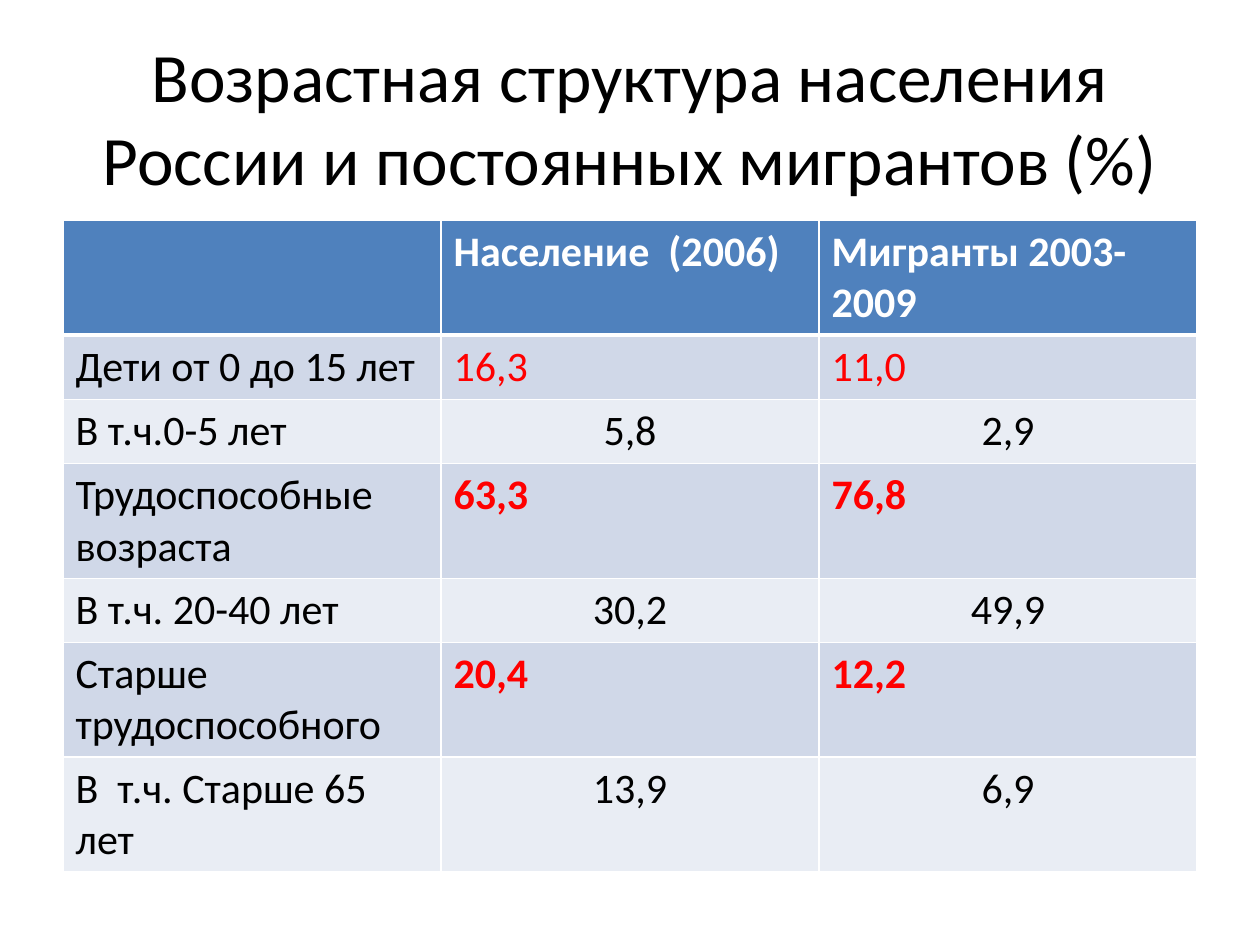
from lxml.etree import SubElement
from pptx import Presentation
from pptx.dml.color import RGBColor as RGB
from pptx.enum.text import MSO_ANCHOR as Anchor, PP_ALIGN as Align
from pptx.oxml.ns import qn
from pptx.util import Inches, Pt

FONT = "Calibri"
COLORS = {
    "text": "000000",
    "accent": "FF0000",
    "white": "FFFFFF",
    "header": "4F81BD",
    "group": "D0D8E8",
    "detail": "E9EDF4",
}
HEADERS = ["", "Население  (2006)", "Мигранты 2003-2009"]
AGES = [
    ("Дети от 0 до 15 лет", "16,3", "11,0"),
    ("В т.ч.0-5 лет", "5,8", "2,9"),
    ("Трудоспособные возраста", "63,3", "76,8"),
    ("В т.ч. 20-40 лет", "30,2", "49,9"),
    ("Старше трудоспособного", "20,4", "12,2"),
    ("В  т.ч. Старше 65 лет", "13,9", "6,9"),
]
ONE_LINE, TWO_LINES = 0.51, 0.91
ROW_HEIGHTS = [TWO_LINES, ONE_LINE, ONE_LINE, TWO_LINES, ONE_LINE, TWO_LINES, TWO_LINES]


def write(frame, text, size, color, bold=False, align=Align.LEFT):
    paragraph = frame.paragraphs[0]
    paragraph.alignment = align
    run = paragraph.add_run()
    run.text = text
    run.font.name = FONT
    run.font.size = Pt(size)
    run.font.bold = bold
    run.font.color.rgb = RGB.from_string(COLORS[color])


def add_title(slide, text):
    title = slide.shapes.add_textbox(Inches(0.5), Inches(0.3), Inches(9), Inches(1.25))
    title.text_frame.word_wrap = True
    title.text_frame.vertical_anchor = Anchor.MIDDLE
    write(title.text_frame, text, 39.6, "text", align=Align.CENTER)


def set_borders(cell, top, bottom):
    properties = cell._tc.get_or_add_tcPr()
    widths = {"a:lnL": 1, "a:lnR": 1, "a:lnT": top, "a:lnB": bottom}
    for position, (side, width) in enumerate(widths.items()):
        line = SubElement(properties, qn(side), w=str(Pt(width)))
        fill = SubElement(line, qn("a:solidFill"))
        SubElement(fill, qn("a:srgbClr"), val=COLORS["white"])
        properties.insert(position, line)


def fill_cell(cell, text, row, column):
    is_header, is_group = row == 0, row % 2 == 1
    background = "header" if is_header else "group" if is_group else "detail"
    cell.fill.solid()
    cell.fill.fore_color.rgb = RGB.from_string(COLORS[background])
    set_borders(cell, top=3 if row == 1 else 1, bottom=3 if is_header else 1)
    if not text:
        return
    is_value = not is_header and column > 0
    color = "white" if is_header else "accent" if is_value and is_group else "text"
    bold = is_header or (is_value and is_group and row > 1)
    align = Align.CENTER if is_value and not is_group else Align.LEFT
    write(cell.text_frame, text, 24, color, bold, align)


def add_age_table(slide):
    rows = [HEADERS, *AGES]
    table = slide.shapes.add_table(
        len(rows), len(HEADERS), Inches(0.5), Inches(1.75), Inches(9), Inches(sum(ROW_HEIGHTS))
    ).table
    for row, (texts, height) in enumerate(zip(rows, ROW_HEIGHTS)):
        table.rows[row].height = Inches(height)
        for column, text in enumerate(texts):
            fill_cell(table.cell(row, column), text, row, column)


def main():
    deck = Presentation()
    deck.slide_width, deck.slide_height = Inches(10), Inches(7.5)
    slide = deck.slides.add_slide(deck.slide_layouts[6])
    add_title(slide, "Возрастная структура населения России и постоянных мигрантов (%)")
    add_age_table(slide)
    deck.save("out.pptx")


if __name__ == "__main__":
    main()
